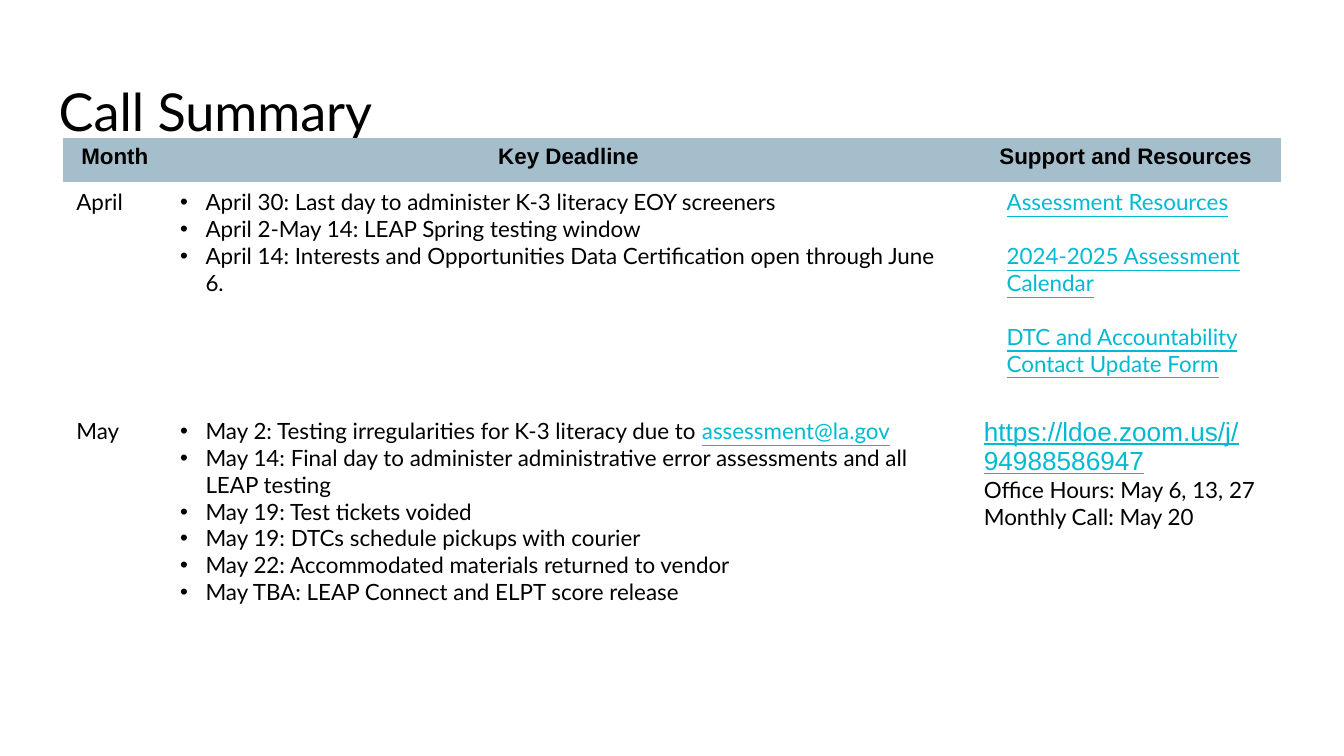
import pptx
import pptx.dml.color
import pptx.enum.text
import pptx.oxml.ns
import pptx.util
from lxml import etree

Cm = pptx.util.Cm
Pt = pptx.util.Pt
ALIGN = pptx.enum.text.PP_ALIGN
ANCHOR = pptx.enum.text.MSO_ANCHOR
qn = pptx.oxml.ns.qn

COLORS = {"text": "000000", "link": "00BAD2", "head": "A4BECC"}
PLAIN = "{2D5ABB26-0587-4C30-8999-92F81FD0307C}"  # table style without lines

HEADS = ["Month", "Key Deadline", "Support and Resources"]
APRIL = [
    "April 30: Last day to administer K-3 literacy EOY screeners",
    "April 2-May 14: LEAP Spring testing window",
    "April 14: Interests and Opportunities Data Certification open through June 6.",
]
LINKS = [
    "Assessment Resources",
    "2024-2025 Assessment Calendar",
    "DTC and Accountability Contact Update Form",
]
MAIL = ("May 2: Testing irregularities for K-3 literacy due to ", "assessment@la.gov")
MAY = [
    "May 14: Final day to administer administrative error assessments and all LEAP testing",
    "May 19: Test tickets voided",
    "May 19: DTCs schedule pickups with courier",
    "May 22: Accommodated materials returned to vendor",
    "May TBA: LEAP Connect and ELPT score release",
]


def rgb(name):
    return pptx.dml.color.RGBColor.from_string(COLORS[name])


def write(para, text, size=12, face="Lato", color="text", bold=False, line=False):
    """Add a formatted run to a paragraph."""
    run = para.add_run()
    run.text = text
    font = run.font
    font.size, font.name = Pt(size), face
    font.bold, font.underline = bold, line
    font.color.rgb = rgb(color)


def link(para, text, **look):
    write(para, text, color="link", line=True, **look)


def next_para(cell):
    """Return the empty first paragraph, or a new one."""
    frame = cell.text_frame
    first = frame.paragraphs[0]
    return frame.add_paragraph() if first.runs else first


def indent(para, left, first=0):
    props = para._p.get_or_add_pPr()
    props.set("marL", str(Cm(left)))
    props.set("indent", str(Cm(first)))
    return props


def bullet(cell, text):
    """Add a bulleted paragraph and return it."""
    para = next_para(cell)
    props = indent(para, 0.48, -0.48)
    tint = etree.SubElement(props, qn("a:buClr"))
    etree.SubElement(tint, qn("a:srgbClr")).set("val", COLORS["text"])
    etree.SubElement(props, qn("a:buFont")).set("typeface", "Arial")
    etree.SubElement(props, qn("a:buChar")).set("char", "•")
    write(para, text)
    return para


def add_title(slide, text):
    box = slide.shapes.title
    box.left, box.top = Cm(0.86), Cm(1.24)
    box.width, box.height = Cm(23.67), Cm(1.6)
    frame = box.text_frame
    frame.auto_size = pptx.enum.text.MSO_AUTO_SIZE.NONE
    frame.vertical_anchor = ANCHOR.TOP
    frame.margin_left = frame.margin_right = Cm(0.25)
    frame.margin_top = frame.margin_bottom = Cm(0.25)
    para = frame.paragraphs[0]
    para.alignment, para.line_spacing = ALIGN.LEFT, 1.0
    write(para, text, size=28)


def add_grid(slide, cols, rows):
    """Add an unstyled table with the given column and row sizes in cm."""
    grid = slide.shapes.add_table(
        len(rows), len(cols), Cm(1.19), Cm(2.6), Cm(sum(cols)), Cm(sum(rows))
    ).table
    grid._tbl.tblPr.find(qn("a:tableStyleId")).text = PLAIN
    grid.horz_banding = False
    for col, width in zip(grid.columns, cols):
        col.width = Cm(width)
    for row, height in zip(grid.rows, rows):
        row.height = Cm(height)
    for cell in grid.iter_cells():
        cell.fill.background()
    return grid


def fill_head(grid):
    for col, text in enumerate(HEADS):
        cell = grid.cell(0, col)
        cell.fill.solid()
        cell.fill.fore_color.rgb = rgb("head")
        para = next_para(cell)
        para.alignment = ALIGN.CENTER
        write(para, text, face="Arial", bold=True)


def fill_april(grid):
    month, dates, helps = grid.rows[1].cells
    write(next_para(month), "April")
    for text in APRIL:
        bullet(dates, text)
    for num, text in enumerate(LINKS):
        para = next_para(helps)
        indent(para, 0.43)
        if num:
            para.space_before = Pt(14.4)
        link(para, text)


def fill_may(grid):
    month, dates, helps = grid.rows[2].cells
    write(next_para(month), "May")
    lead, mail = MAIL
    link(bullet(dates, lead), mail)
    for text in MAY:
        bullet(dates, text)
    link(next_para(helps), "https://ldoe.zoom.us/j/94988586947", size=14, face="Arial")
    write(next_para(helps), "Office Hours: May 6, 13, 27 Monthly Call: May 20")


def main():
    deck = pptx.Presentation()
    deck.slide_width, deck.slide_height = Cm(25.4), Cm(14.29)
    slide = deck.slides.add_slide(deck.slide_layouts[5])

    # Table of deadlines, one row a month
    add_title(slide, "Call Summary")
    grid = add_grid(slide, cols=[1.96, 15.19, 5.87], rows=[0.84, 4.32, 4.32])
    fill_head(grid)
    fill_april(grid)
    fill_may(grid)

    deck.save("out.pptx")


if __name__ == "__main__":
    main()
